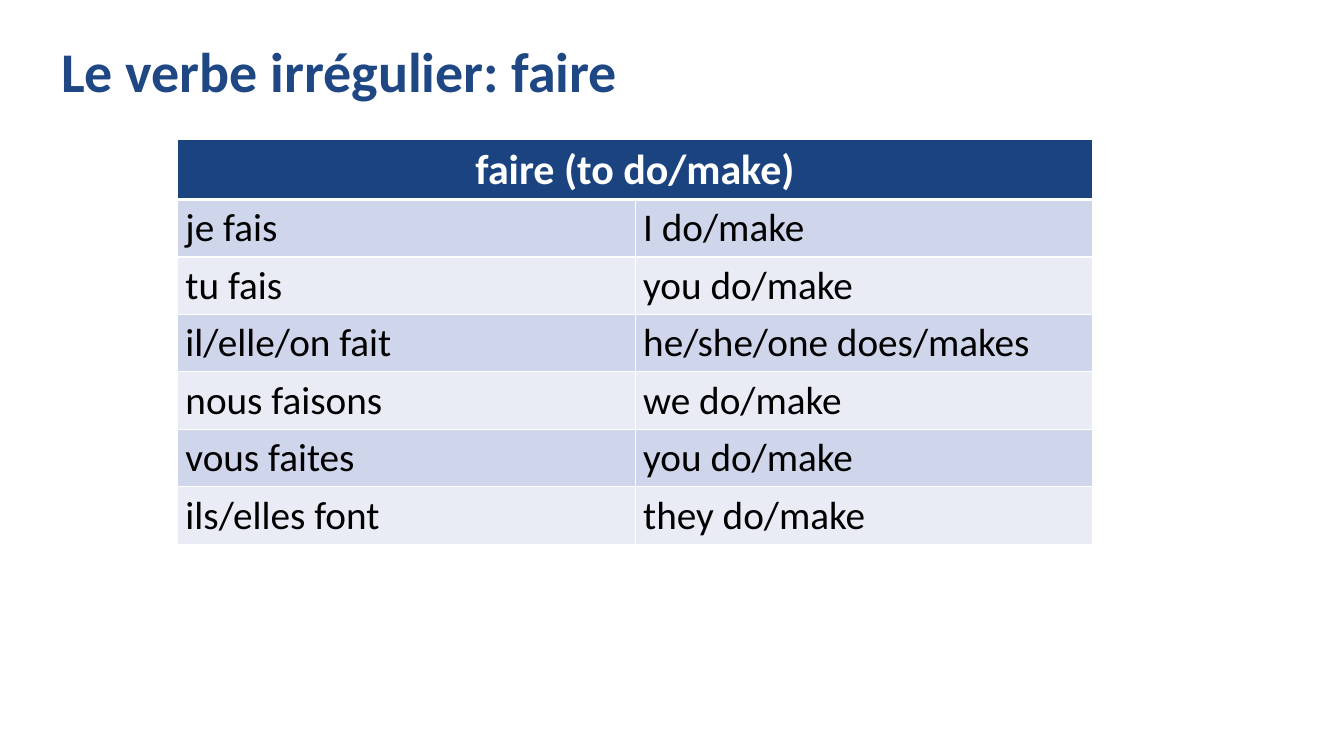
from dataclasses import dataclass

from lxml.etree import SubElement
from pptx import Presentation
from pptx.dml.color import RGBColor
from pptx.enum.text import MSO_ANCHOR, PP_ALIGN
from pptx.oxml.ns import qn
from pptx.slide import Slide
from pptx.table import _Cell
from pptx.util import Emu, Pt


@dataclass(frozen=True)
class Theme:
    font: str = "Calibri"
    title: str = "1E4783"
    header: str = "1A437F"
    bands: tuple[str, str] = ("CFD5EA", "E9EBF5")
    light: str = "FFFFFF"
    dark: str = "000000"
    title_pt: int = 40
    header_pt: int = 30
    body_pt: int = 28
    rule_pt: int = 1
    header_rule_pt: int = 3


@dataclass(frozen=True)
class Form:
    french: str
    english: str


@dataclass(frozen=True)
class CellStyle:
    fill: str
    color: str
    size: int
    bold: bool = False
    align: PP_ALIGN = PP_ALIGN.LEFT
    anchor: MSO_ANCHOR = MSO_ANCHOR.TOP
    top: int = 1
    bottom: int = 1


THEME = Theme()
HEADER = CellStyle(THEME.header, THEME.light, THEME.header_pt, True,
                   PP_ALIGN.CENTER, MSO_ANCHOR.MIDDLE,
                   bottom=THEME.header_rule_pt)
FORMS = [
    Form("je fais", "I do/make"),
    Form("tu fais", "you do/make"),
    Form("il/elle/on fait", "he/she/one does/makes"),
    Form("nous faisons", "we do/make"),
    Form("vous faites", "you do/make"),
    Form("ils/elles font", "they do/make"),
]


def px(n: int) -> Emu:
    return Emu(n * 9144)


def style_text(p, size: int, color: str, bold: bool) -> None:
    p.font.name = THEME.font
    p.font.size = Pt(size)
    p.font.bold = bold
    p.font.color.rgb = RGBColor.from_string(color)


def add_title(s: Slide, text: str) -> None:
    tf = s.shapes.add_textbox(px(51), px(40), px(1150), px(68)).text_frame
    tf.word_wrap = True
    tf.vertical_anchor = MSO_ANCHOR.MIDDLE
    p = tf.paragraphs[0]
    p.text = text
    p.line_spacing = 0.9
    style_text(p, THEME.title_pt, THEME.title, True)


def set_borders(cell: _Cell, top: int, bottom: int) -> None:
    tc_pr = cell._tc.get_or_add_tcPr()
    widths = {"a:lnL": THEME.rule_pt, "a:lnR": THEME.rule_pt,
              "a:lnT": top, "a:lnB": bottom}
    for tag, width in widths.items():
        ln = SubElement(tc_pr, qn(tag), w=str(Pt(width)))
        fill = SubElement(ln, qn("a:solidFill"))
        SubElement(fill, qn("a:srgbClr"), val=THEME.light)


def style_cell(cell: _Cell, text: str, style: CellStyle) -> None:
    set_borders(cell, style.top, style.bottom)
    cell.fill.solid()
    cell.fill.fore_color.rgb = RGBColor.from_string(style.fill)
    cell.margin_left = cell.margin_right = px(8)
    cell.margin_top = cell.margin_bottom = px(5)
    cell.vertical_anchor = style.anchor
    p = cell.text_frame.paragraphs[0]
    p.text = text
    p.alignment = style.align
    style_text(p, style.size, style.color, style.bold)


def add_conjugation(s: Slide, heading: str, forms: list[Form]) -> None:
    table = s.shapes.add_table(len(forms) + 1, 2, px(176), px(138),
                               px(908), px(400)).table
    table.rows[0].height = px(58)
    table.cell(0, 0).merge(table.cell(0, 1))
    style_cell(table.cell(0, 0), heading, HEADER)
    style_cell(table.cell(0, 1), "", HEADER)
    for i, form in enumerate(forms):
        table.rows[i + 1].height = px(57)
        style = CellStyle(THEME.bands[i % 2], THEME.dark, THEME.body_pt,
                          top=THEME.rule_pt if i else THEME.header_rule_pt)
        for j, text in enumerate((form.french, form.english)):
            style_cell(table.cell(i + 1, j), text, style)


def main() -> None:
    prs = Presentation()
    prs.slide_width, prs.slide_height = px(1333), px(750)
    s = prs.slides.add_slide(prs.slide_layouts[6])
    add_title(s, "Le verbe irrégulier: faire")
    add_conjugation(s, "faire (to do/make)", FORMS)
    prs.save("out.pptx")


if __name__ == "__main__":
    main()
